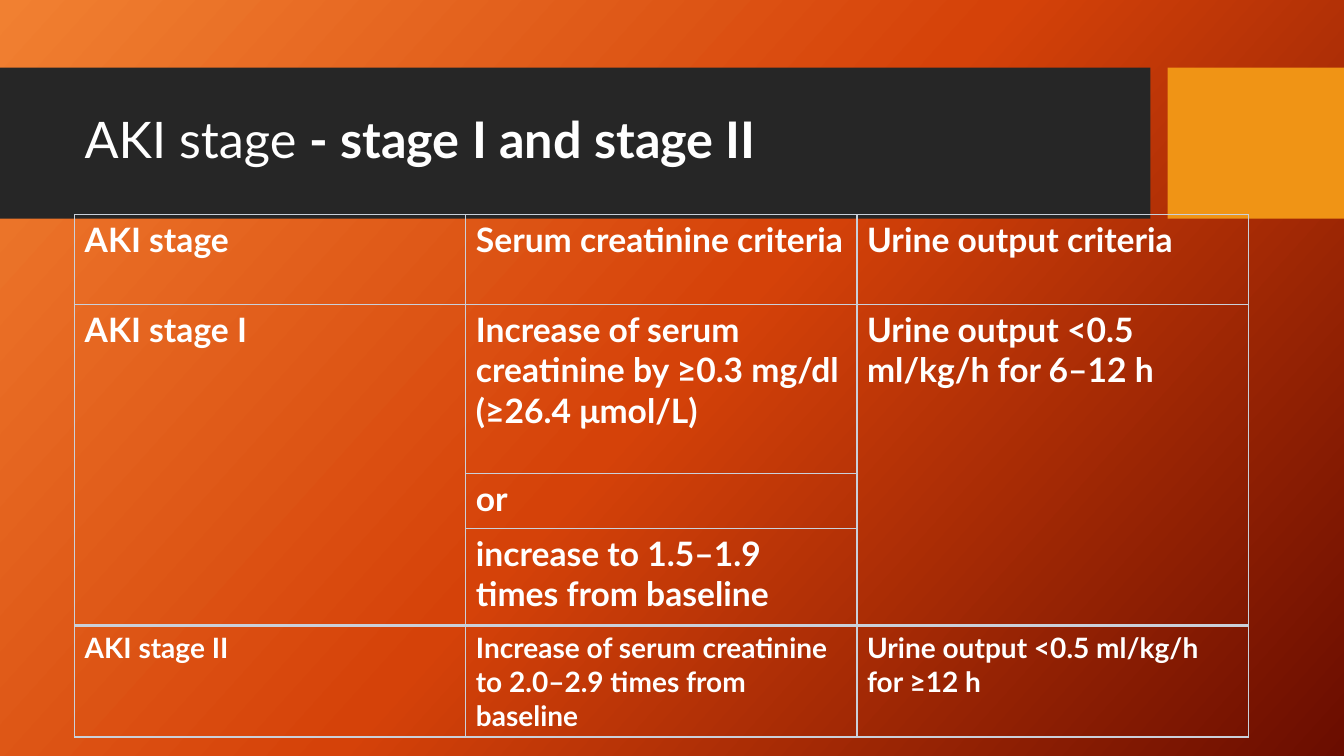
from lxml import etree
from pptx import Presentation
from pptx.dml.color import RGBColor
from pptx.enum.shapes import MSO_SHAPE
from pptx.enum.text import MSO_ANCHOR
from pptx.oxml import parse_xml
from pptx.oxml.ns import nsdecls, qn
from pptx.util import Inches, Pt

FONT = "Lato"
WHITE = RGBColor(0xFF, 0xFF, 0xFF)
CHARCOAL = RGBColor(0x26, 0x26, 0x26)
AMBER = RGBColor(0xF0, 0x94, 0x15)
GRID = RGBColor(0xCA, 0xD0, 0xDA)
BACKGROUND_STOPS = [
    (0, RGBColor(0xF1, 0x80, 0x31)),
    (50, RGBColor(0xD5, 0x42, 0x09)),
    (100, RGBColor(0x6A, 0x0D, 0x00)),
]
BACKGROUND_ANGLE = 42

TABLE_LEFT = 0.74
COLUMN_WIDTH = 3.88
CRITERIA_ROWS = [
    ["AKI stage", "Serum creatinine criteria", "Urine output criteria"],
    ["AKI stage I",
     "Increase of serum creatinine by ≥0.3 mg/dl (≥26.4 μmol/L)",
     "Urine output <0.5 ml/kg/h for 6–12 h"],
    ["", "or", ""],
    ["", "increase to 1.5–1.9 times from baseline", ""],
]
STAGE_TWO_ROWS = [
    ["AKI stage II",
     "Increase of serum creatinine to 2.0–2.9 times from baseline",
     "Urine output <0.5 ml/kg/h for ≥12 h"],
]


def set_background(slide):
    fill = slide.background.fill
    fill.gradient()
    fill.gradient_angle = 360 - BACKGROUND_ANGLE  # the setter counts anticlockwise
    stop_list = slide.background._cSld.find(".//" + qn("a:gsLst"))
    for stop in list(stop_list):
        stop_list.remove(stop)
    for percent, color in BACKGROUND_STOPS:
        stop_list.append(parse_xml(
            f'<a:gs {nsdecls("a")} pos="{percent * 1000}">'
            f'<a:srgbClr val="{color}"/></a:gs>'))


def add_band(slide, left, width, color):
    band = slide.shapes.add_shape(
        MSO_SHAPE.RECTANGLE, Inches(left), Inches(0.67), Inches(width), Inches(1.5))
    band.shadow.inherit = False
    band.fill.solid()
    band.fill.fore_color.rgb = color
    band.line.fill.background()


def style_font(font, size):
    font.name = FONT
    font.size = Pt(size)
    font.color.rgb = WHITE


def add_title(slide, stem, emphasis):
    box = slide.shapes.add_textbox(
        Inches(0.74), Inches(0.82), Inches(10.51), Inches(1.18))
    frame = box.text_frame
    frame.word_wrap = True
    frame.vertical_anchor = MSO_ANCHOR.MIDDLE
    paragraph = frame.paragraphs[0]
    paragraph.line_spacing = 0.9
    style_font(paragraph.font, 36)
    paragraph.add_run().text = stem
    run = paragraph.add_run()
    run.text = emphasis
    run.font.bold = True


def add_cell_borders(cell):
    properties = cell._tc.get_or_add_tcPr()
    for side in ("a:lnL", "a:lnR", "a:lnT", "a:lnB"):
        line = etree.SubElement(properties, qn(side), w=str(Pt(1)))
        fill = etree.SubElement(line, qn("a:solidFill"))
        etree.SubElement(fill, qn("a:srgbClr"), val=str(GRID))


def add_grid_table(slide, top, row_heights, rows, size):
    columns = len(rows[0])
    table = slide.shapes.add_table(
        len(rows), columns, Inches(TABLE_LEFT), Inches(top),
        Inches(COLUMN_WIDTH * columns), Inches(sum(row_heights))).table
    table.first_row = False
    table.horz_banding = False
    for column in table.columns:
        column.width = Inches(COLUMN_WIDTH)
    for row, height, texts in zip(table.rows, row_heights, rows):
        row.height = Inches(height)
        for cell, text in zip(row.cells, texts):
            add_cell_borders(cell)
            cell.fill.background()
            cell.text = text
            font = cell.text_frame.paragraphs[0].font
            style_font(font, size)
            font.bold = True
    return table


def main():
    presentation = Presentation()
    presentation.slide_width = Inches(13.33)
    presentation.slide_height = Inches(7.5)
    slide = presentation.slides.add_slide(presentation.slide_layouts[6])

    set_background(slide)
    add_band(slide, 0, 11.41, CHARCOAL)
    add_band(slide, 11.58, 1.75, AMBER)
    add_title(slide, "AKI stage ", "- stage I and stage II")

    criteria = add_grid_table(slide, 2.13, [0.89, 1.68, 0.54, 0.96], CRITERIA_ROWS, 24)
    for column in (0, 2):
        criteria.cell(1, column).merge(criteria.cell(3, column))
    add_grid_table(slide, 6.21, [1.1], STAGE_TWO_ROWS, 20)

    presentation.save("out.pptx")


if __name__ == "__main__":
    main()
